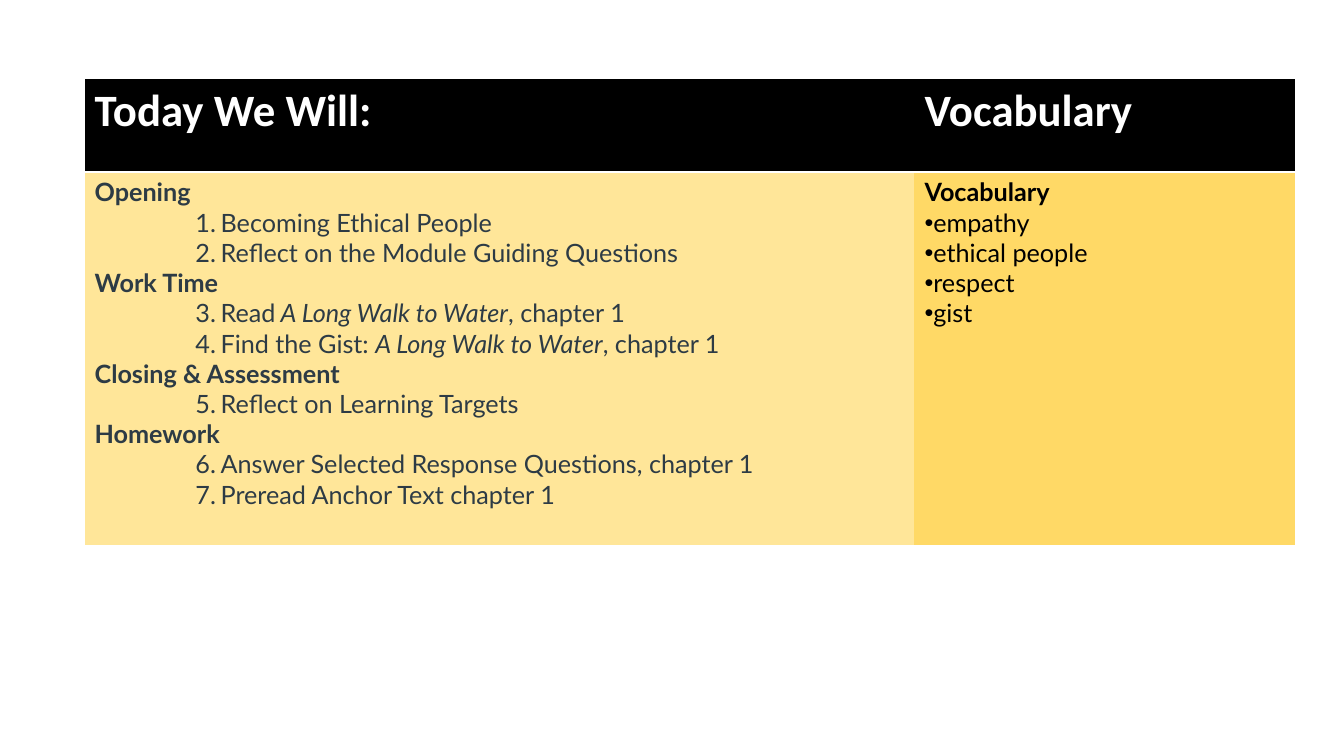
from dataclasses import dataclass
from itertools import count

from lxml.etree import SubElement
from pptx import Presentation
from pptx.dml.color import RGBColor
from pptx.oxml import parse_xml
from pptx.oxml.ns import qn
from pptx.util import Pt


@dataclass(frozen=True)
class Theme:
    header_fill: str = "000000"
    agenda_fill: str = "FFE699"
    vocabulary_fill: str = "FFD966"
    header_text: str = "FFFFFF"
    agenda_text: str = "2D3B45"
    vocabulary_text: str = "000000"
    rule: str = "FFFFFF"
    header_font: str = "Calibri"
    body_font: str = "Lato"
    header_size: int = 32
    body_size: int = 18


THEME = Theme()
PLAIN_TABLE_STYLE = "{2D5ABB26-0587-4C30-8999-92F81FD0307C}"
COLUMN_WIDTHS = (592.8, 271.6)
ROW_HEIGHTS = (66.2, 266.4)
HEADERS = ("Today We Will:", "Vocabulary")
AGENDA = (
    ("Opening", (
        ("Becoming Ethical People",),
        ("Reflect on the Module Guiding Questions",),
    )),
    ("Work Time", (
        ("Read", " A Long Walk to Water", ", chapter 1"),
        ("Find the Gist: ", "A Long Walk to Water", ", chapter 1"),
    )),
    ("Closing & Assessment", (
        ("Reflect on Learning Targets",),
    )),
    ("Homework", (
        ("Answer Selected Response Questions, chapter 1",),
        ("Preread Anchor Text chapter 1",),
    )),
)
VOCABULARY = ("empathy", "ethical people", "respect", "gist")


def text_format(font, size, color):
    return {"name": font, "size": Pt(size), "color": RGBColor.from_string(color)}


def add_words(paragraph, words, look, **emphasis):
    run = paragraph.add_run()
    run.text = words
    for attribute, value in {**look, **emphasis}.items():
        if attribute == "color":
            run.font.color.rgb = value
        else:
            setattr(run.font, attribute, value)


def next_paragraph(cell):
    first = cell.text_frame.paragraphs[0]
    return cell.text_frame.add_paragraph() if first.runs else first


def add_heading(cell, words, look):
    add_words(next_paragraph(cell), words, look, bold=True, italic=False)


def set_marker(paragraph, tag, margin, indent, **attributes):
    properties = paragraph._p.get_or_add_pPr()
    properties.set("marL", str(Pt(margin)))
    properties.set("indent", str(Pt(indent)))
    SubElement(properties, qn("a:buFont"), typeface="Arial" if tag == "a:buChar" else "+mj-lt")
    SubElement(properties, qn(tag), **attributes)


def fill_cell(cell, color):
    cell.fill.solid()
    cell.fill.fore_color.rgb = RGBColor.from_string(color)


def add_bottom_rule(cell, color, width):
    rule = parse_xml(
        '<a:lnB xmlns:a="http://schemas.openxmlformats.org/drawingml/2006/main" '
        f'w="{Pt(width)}"><a:solidFill><a:srgbClr val="{color}"/></a:solidFill></a:lnB>'
    )
    cell._tc.get_or_add_tcPr().insert(0, rule)


def write_header(cell, words):
    fill_cell(cell, THEME.header_fill)
    add_bottom_rule(cell, THEME.rule, 2)
    add_heading(cell, words, text_format(THEME.header_font, THEME.header_size, THEME.header_text))


def write_agenda(cell):
    fill_cell(cell, THEME.agenda_fill)
    look = text_format(THEME.body_font, THEME.body_size, THEME.agenda_text)
    numbers = count(1)
    for section, activities in AGENDA:
        add_heading(cell, section, look)
        first_number = None
        for activity in activities:
            number = next(numbers)
            first_number = first_number or number
            paragraph = next_paragraph(cell)
            paragraph.level = 2
            set_marker(paragraph, "a:buAutoNum", 90, -18,
                       type="arabicPeriod", startAt=str(first_number))
            for position, words in enumerate(activity):
                add_words(paragraph, words, look, bold=False, italic=position == 1)


def write_vocabulary(cell):
    fill_cell(cell, THEME.vocabulary_fill)
    look = text_format(THEME.body_font, THEME.body_size, THEME.vocabulary_text)
    add_heading(cell, "Vocabulary", look)
    for term in VOCABULARY:
        paragraph = next_paragraph(cell)
        set_marker(paragraph, "a:buChar", 0, 0, char="•")
        add_words(paragraph, term, look, bold=False, italic=False)


def add_lesson_table(slide):
    frame = slide.shapes.add_table(
        2, 2, Pt(60.4), Pt(56.6), Pt(sum(COLUMN_WIDTHS)), Pt(sum(ROW_HEIGHTS))
    )
    lesson = frame.table
    lesson.horz_banding = False
    lesson._tbl.tblPr.find(qn("a:tableStyleId")).text = PLAIN_TABLE_STYLE
    for column, width in zip(lesson.columns, COLUMN_WIDTHS):
        column.width = Pt(width)
    for row, height in zip(lesson.rows, ROW_HEIGHTS):
        row.height = Pt(height)
    return lesson


def main():
    presentation = Presentation()
    presentation.slide_width = Pt(960)
    presentation.slide_height = Pt(540)
    slide = presentation.slides.add_slide(presentation.slide_layouts[6])
    lesson = add_lesson_table(slide)
    for column, words in enumerate(HEADERS):
        write_header(lesson.cell(0, column), words)
    write_agenda(lesson.cell(1, 0))
    write_vocabulary(lesson.cell(1, 1))
    presentation.save("out.pptx")


if __name__ == "__main__":
    main()
